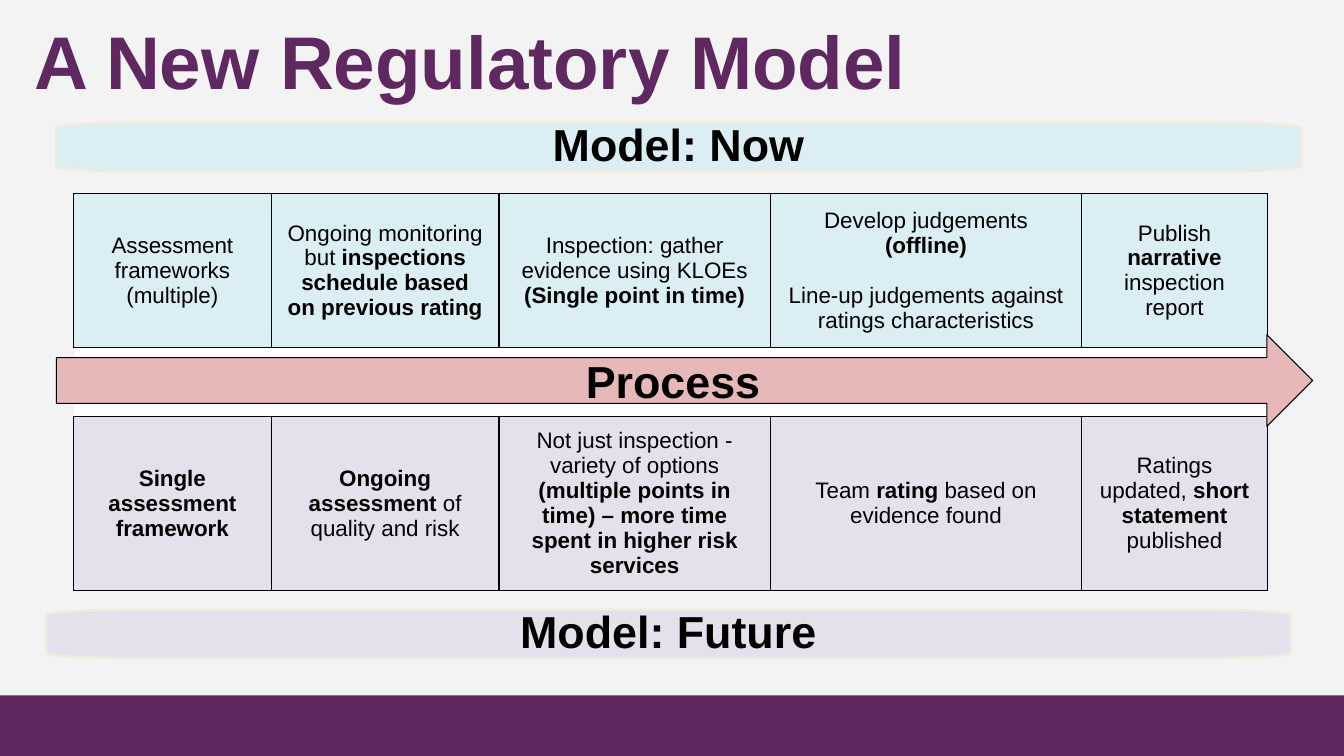
import math

from lxml import etree
from pptx import Presentation
from pptx.dml.color import RGBColor
from pptx.enum import shapes, text
from pptx.oxml import ns
from pptx.util import Inches, Pt

FONT = "Arial"
BLACK = RGBColor(0x00, 0x00, 0x00)
WHITE = RGBColor(0xFF, 0xFF, 0xFF)
GREY = RGBColor(0xF3, 0xF3, 0xF3)
PURPLE = RGBColor(0x5F, 0x28, 0x61)
BLUE = RGBColor(0xDB, 0xEE, 0xF4)
LILAC = RGBColor(0xE6, 0xE0, 0xEC)
PINK = RGBColor(0xE6, 0xB9, 0xB8)
CREAM = RGBColor(0xEE, 0xEC, 0xE1)

COLUMN_WIDTHS = [1.96, 2.26, 2.69, 3.09, 1.84]
ROW_HEIGHTS = [1.53, 0.68, 1.73]
NOW_STEPS = [
    ["Assessment frameworks", "(multiple)"],
    ["Ongoing monitoring but **inspections schedule based on previous rating**"],
    ["Inspection: gather evidence using KLOEs", "**(Single point in time)**"],
    ["Develop judgements **(offline)**",
     "Line-up judgements against ratings characteristics"],
    ["Publish **narrative** inspection report"],
]
FUTURE_STEPS = [
    ["**Single assessment framework**"],
    ["**Ongoing assessment** of quality and risk"],
    ["Not just inspection - variety of options **(multiple points in time) "
     "– more time spent in higher risk services**"],
    ["Team **rating** based on evidence found"],
    ["Ratings updated, **short statement** published"],
]


def style_font(paragraph, size, color=BLACK, bold=None):
    """Set the font of a whole paragraph."""
    font = paragraph.font
    font.name, font.size, font.bold = FONT, Pt(size), bold
    font.color.rgb = color


def paint(shape, fill, line=None, width=0):
    """Give a shape a flat fill and an optional outline."""
    shape.shadow.inherit = False
    shape.fill.solid()
    shape.fill.fore_color.rgb = fill
    if line is None:
        shape.line.fill.background()
    else:
        shape.line.color.rgb = line
        shape.line.width = Pt(width)


def add_label(shape, wording):
    """Centre a large bold label in a shape."""
    frame = shape.text_frame
    frame.word_wrap = True
    frame.vertical_anchor = text.MSO_ANCHOR.MIDDLE
    frame.margin_top = frame.margin_bottom = 0
    label = frame.paragraphs[0]
    label.text = wording
    label.alignment = text.PP_ALIGN.CENTER
    style_font(label, 32, bold=True)
    return label


def add_title(slide, left, top, width, height):
    """Place and format the slide title."""
    title = slide.shapes.title
    title.left, title.top = Inches(left), Inches(top)
    title.width, title.height = Inches(width), Inches(height)
    frame = title.text_frame
    frame.text = "A New Regulatory Model"
    frame.word_wrap = True
    frame.auto_size = text.MSO_AUTO_SIZE.NONE
    frame.vertical_anchor = text.MSO_ANCHOR.MIDDLE
    frame.margin_left = Inches(0.1)
    frame.margin_bottom = Inches(0.18)
    heading = frame.paragraphs[0]
    heading.alignment = text.PP_ALIGN.LEFT
    style_font(heading, 53.3, PURPLE, True)


def add_footer_band(slide, left, top, width, height):
    """Draw the coloured band along the bottom edge."""
    band = slide.shapes.add_shape(
        shapes.MSO_SHAPE.RECTANGLE,
        Inches(left), Inches(top), Inches(width), Inches(height))
    paint(band, PURPLE)


def add_banner(slide, left, top, width, height, wording, fill):
    """Draw a banner with long, shallow elliptical corners."""
    radius_x, radius_y, steps = 0.89, 0.05, 12
    centres = [(left + width - radius_x, top + height - radius_y),
               (left + radius_x, top + height - radius_y),
               (left + radius_x, top + radius_y),
               (left + width - radius_x, top + radius_y)]
    outline = []
    for quarter, (x, y) in enumerate(centres):
        for step in range(steps + 1):
            angle = math.pi / 2 * (quarter + step / steps)
            outline.append((Inches(x + radius_x * math.cos(angle)),
                            Inches(y + radius_y * math.sin(angle))))
    builder = slide.shapes.build_freeform(*outline[0])
    builder.add_line_segments(outline[1:], close=True)
    banner = builder.convert_to_shape()
    paint(banner, fill, CREAM, 2)
    add_label(banner, wording).line_spacing = 0.9


def set_borders(cell, sides, color):
    """Draw the named cell sides and hide the others."""
    properties = cell._tc.get_or_add_tcPr()
    for side in "LRTB":
        line = etree.SubElement(properties, ns.qn(f"a:ln{side}"), w=str(Pt(1)))
        if side in sides:
            solid = etree.SubElement(line, ns.qn("a:solidFill"))
            etree.SubElement(solid, ns.qn("a:srgbClr"), val=str(color))
        else:
            etree.SubElement(line, ns.qn("a:noFill"))


def fill_cell(cell, lines):
    """Write centred lines, with bold parts between double asterisks."""
    cell.vertical_anchor = text.MSO_ANCHOR.MIDDLE
    cell.margin_left = cell.margin_right = Inches(0.14)
    cell.margin_top = cell.margin_bottom = Inches(0.07)
    frame = cell.text_frame
    for index, line in enumerate(lines):
        paragraph = frame.add_paragraph() if index else frame.paragraphs[0]
        paragraph.alignment = text.PP_ALIGN.CENTER
        if index and line.startswith("Line-up"):
            paragraph.space_before = Pt(18)
        style_font(paragraph, 16)
        for part, wording in enumerate(line.split("**")):
            if wording:
                run = paragraph.add_run()
                run.text = wording
                run.font.bold = part % 2 == 1


def add_steps_table(slide, left, top):
    """Build the table of current and future steps around a blank row."""
    table = slide.shapes.add_table(
        len(ROW_HEIGHTS), len(COLUMN_WIDTHS), Inches(left), Inches(top),
        Inches(sum(COLUMN_WIDTHS)), Inches(sum(ROW_HEIGHTS))).table
    table.first_row = table.horz_banding = False
    for column, width in zip(table.columns, COLUMN_WIDTHS):
        column.width = Inches(width)
    contents = [(NOW_STEPS, BLUE, "LRTB"),
                ([[]] * len(COLUMN_WIDTHS), WHITE, "TB"),
                (FUTURE_STEPS, LILAC, "LRTB")]
    for row, height, (steps, fill, sides) in zip(table.rows, ROW_HEIGHTS, contents):
        row.height = Inches(height)
        for cell, lines in zip(row.cells, steps):
            set_borders(cell, sides, BLACK)
            cell.fill.solid()
            cell.fill.fore_color.rgb = fill
            fill_cell(cell, lines)


def add_process_arrow(slide, left, top, width, height):
    """Draw the process arrow between the two rows of steps."""
    arrow = slide.shapes.add_shape(
        shapes.MSO_SHAPE.RIGHT_ARROW,
        Inches(left), Inches(top), Inches(width), Inches(height))
    paint(arrow, PINK, BLACK, 0.75)
    add_label(arrow, "Process")


def build_model_slide(deck):
    """Lay out the slide that compares the two models."""
    slide = deck.slides.add_slide(deck.slide_layouts[5])
    slide.background.fill.solid()
    slide.background.fill.fore_color.rgb = GREY
    add_footer_band(slide, 0, 6.9, 13.33, 0.6)
    add_title(slide, 0.24, 0.09, 12.43, 1.13)
    add_steps_table(slide, 0.73, 1.92)
    add_banner(slide, 0.56, 1.22, 12.34, 0.48, "Model: Now", BLUE)
    add_banner(slide, 0.46, 6.05, 12.34, 0.48, "Model: Future", LILAC)
    add_process_arrow(slide, 0.56, 3.32, 12.46, 0.91)


def main():
    """Create and save the presentation."""
    deck = Presentation()
    deck.slide_width, deck.slide_height = Inches(13.33), Inches(7.5)
    build_model_slide(deck)
    deck.save("out.pptx")


if __name__ == "__main__":
    main()
